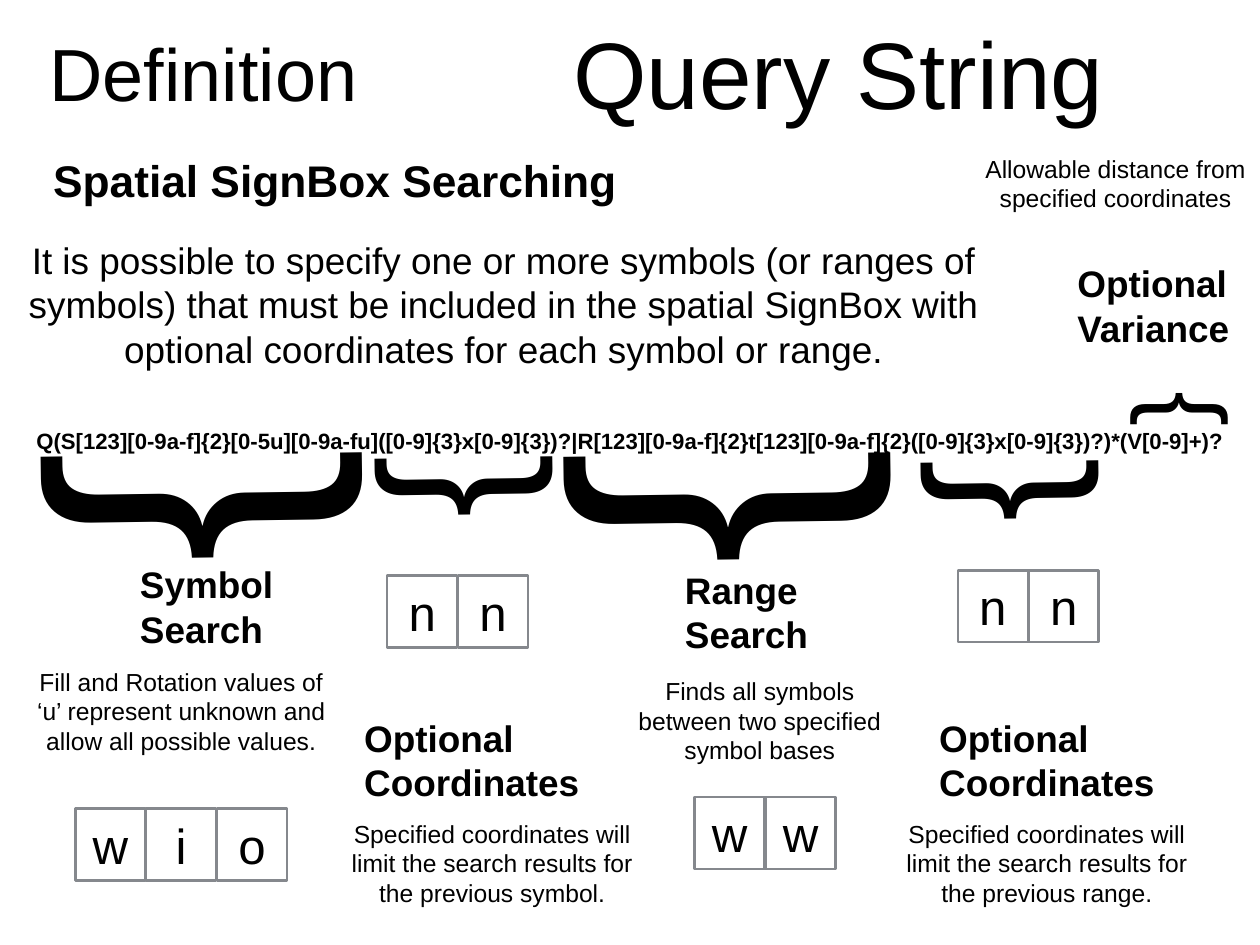
from pptx import Presentation
from pptx.dml.color import RGBColor
from pptx.enum.shapes import MSO_SHAPE
from pptx.enum.text import MSO_ANCHOR, MSO_AUTO_SIZE, PP_ALIGN
from pptx.util import Emu, Pt

PX = 9144
FONT = "Arial"
COLOURS = {"ink": "000000", "frame": "85888D", "paper": "FFFFFF"}
CELL_WIDTH, CELL_HEIGHT, CELL_PITCH = 79, 81, 80

QUERY = (
    "Q(S[123][0-9a-f]{2}[0-5u][0-9a-fu]([0-9]{3}x[0-9]{3})?"
    "|R[123][0-9a-f]{2}t[123][0-9a-f]{2}([0-9]{3}x[0-9]{3})?)*(V[0-9]+)?"
)
INTRODUCTION = (
    "It is possible to specify one or more symbols (or ranges of symbols) "
    "that must be included in the spatial SignBox with optional coordinates "
    "for each symbol or range."
)
BRACES = [
    (207, 338, 153, 478, 280, 89.2),
    (484, 444, 142, 269, 155, 89.2),
    (801, 334, 153, 486, 285, 89.2),
    (1100, 448, 142, 269, 155, 89.2),
    (1286, 382, 57, 153, 85, 270),
]
LABELS = [
    (152, 629, 191, ["Symbol Search"]),
    (405, 802, 264, ["Optional", "Coordinates"]),
    (767, 635, 191, ["Range", "Search"]),
    (1054, 802, 264, ["Optional", "Coordinates"]),
    (1210, 289, 208, ["Optional", "Variance"]),
]
COORDINATES_NOTE = "Specified coordinates will limit the search results for the previous {}."
NOTES = [
    (34, 747, 341, "Fill and Rotation values of ‘u’ represent unknown and allow all possible values."),
    (385, 919, 341, COORDINATES_NOTE.format("symbol")),
    (710, 758, 295, "Finds all symbols between two specified symbol bases"),
    (1011, 919, 341, COORDINATES_NOTE.format("range")),
]
CELL_ROWS = [(85, 913, "wio"), (437, 650, "nn"), (1081, 644, "nn"), (784, 900, "ww")]


def px(*lengths):
    return [Emu(length * PX) for length in lengths]


def colour(name):
    return RGBColor.from_string(COLOURS[name])


def write(shape, lines, size, bold=False, align=PP_ALIGN.LEFT, inset=0,
          wrap=True, fit=MSO_AUTO_SIZE.SHAPE_TO_FIT_TEXT):
    frame = shape.text_frame
    frame.text = "\n".join(lines)
    frame.word_wrap = wrap
    frame.auto_size = fit
    frame.vertical_anchor = MSO_ANCHOR.MIDDLE
    frame.margin_left = frame.margin_top = Emu(inset * PX)
    frame.margin_right = frame.margin_bottom = Emu(inset * PX)
    for para in frame.paragraphs:
        para.alignment = align
        para.font.name = FONT
        para.font.size = Pt(size)
        para.font.bold = bold
        para.font.color.rgb = colour("ink")


def add_text(page, bounds, lines, size, inset=6, **style):
    box = page.shapes.add_textbox(*px(*bounds))
    write(box, lines, size, inset=inset, **style)
    return box


def place_title(page, bounds, text, size):
    title = page.shapes.title
    title.left, title.top, title.width, title.height = px(*bounds)
    write(title, [text], size, fit=MSO_AUTO_SIZE.NONE)


def add_brace(page, left, top, width, height, size, angle):
    brace = add_text(page, (left, top, width, height), ["}"], size)
    brace.rotation = angle


def add_cells(page, left, top, letters):
    for column, letter in enumerate(letters):
        bounds = (left + column * CELL_PITCH, top, CELL_WIDTH, CELL_HEIGHT)
        cell = page.shapes.add_shape(MSO_SHAPE.RECTANGLE, *px(*bounds))
        cell.shadow.inherit = False
        cell.fill.background()
        cell.line.color.rgb = colour("frame")
        cell.line.width = Pt(2)
        write(cell, [letter], 40, align=PP_ALIGN.CENTER)


def main():
    deck = Presentation()
    deck.slide_width, deck.slide_height = px(1422, 1067)
    page = deck.slides.add_slide(deck.slide_layouts[5])
    page.background.fill.solid()
    page.background.fill.fore_color.rgb = colour("paper")
    centre = PP_ALIGN.CENTER

    place_title(page, (56, 11, 575, 140), "Definition", 60)
    add_text(page, (484, 11, 925, 140), ["Query String"], 76.8, inset=0,
             align=centre, fit=MSO_AUTO_SIZE.NONE)
    add_text(page, (54, 168, 773, 71), ["Spatial SignBox Searching"], 36, bold=True)
    add_text(page, (14, 263, 1109, 161), [INTRODUCTION], 30, align=centre)
    add_text(page, (5, 476, 1412, 42), [QUERY], 18, bold=True, align=centre)
    for brace in BRACES:
        add_brace(page, *brace)
    for left, top, width, lines in LABELS:
        add_text(page, (left, top, width, 111), lines, 30, bold=True)
    for left, top, width, note in NOTES:
        add_text(page, (left, top, width, 111), [note], 20, align=centre)
    add_text(page, (1100, 168, 318, 78),
             ["Allowable distance from", "specified coordinates"], 20,
             align=centre, wrap=False)
    for row in CELL_ROWS:
        add_cells(page, *row)

    deck.save("out.pptx")


if __name__ == "__main__":
    main()
